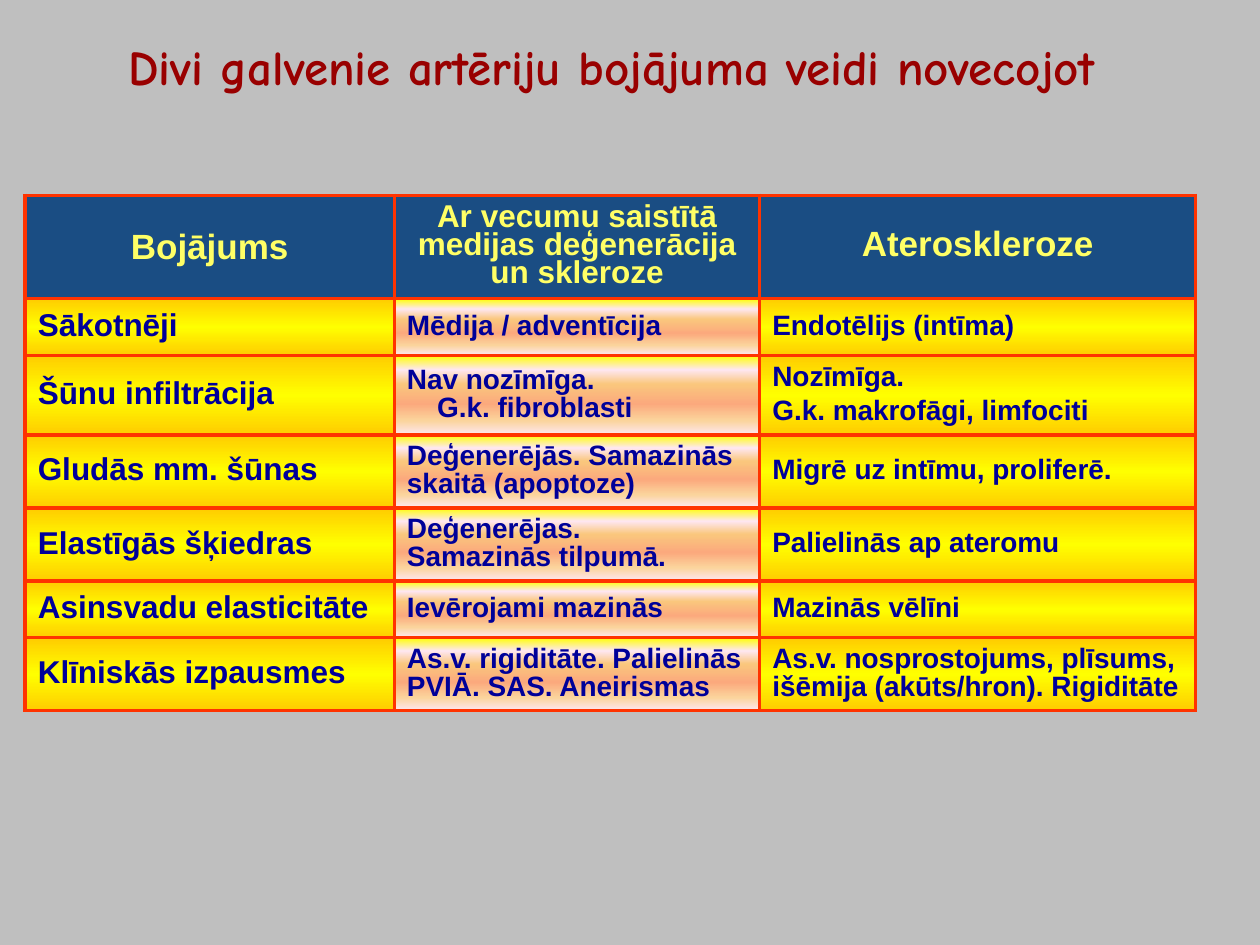
import pptx
import pptx.dml.color
import pptx.enum.text
import pptx.oxml
import pptx.oxml.ns
import pptx.util

WIDTH = pptx.util.Inches(10)
HEIGHT = pptx.util.Inches(7.5)
COLORS = {
    "background": "BFBFBF",
    "title": "990000",
    "header": "1A4D83",
    "header text": "FFFF66",
    "body text": "000099",
    "border": "FF3300",
}
YELLOW = [(0, "FFCC00"), (50, "FFFF00"), (100, "FFCC00")]
PEACH = [(0, "FFFF00"), (18, "FEE7F2"), (36, "FAC77D"),
         (61, "FBA97D"), (82, "FBD49C"), (100, "FEE7F2")]
COLUMN_GRADIENTS = [YELLOW, PEACH, YELLOW]
COLUMN_INCHES = [2.93, 2.9, 3.46]
ROW_INCHES = [0.82, 0.45, 0.63, 0.58, 0.58, 0.45, 0.58]
HEADER_SIZES = [20, 18, 20]
HEADER_SPACINGS = [1.0, 0.8, 0.8]
BODY_SIZES = [18, 16, 16]
INDENTED_CELL = (2, 1)

# A newline starts a paragraph, a vertical tab breaks a line.
ROWS = [
    ["Bojājums", "Ar vecumu saistītā medijas deģenerācija un skleroze",
     "Ateroskleroze"],
    ["Sākotnēji", "Mēdija / adventīcija", "Endotēlijs (intīma)"],
    ["Šūnu infiltrācija", "Nav nozīmīga.\nG.k. fibroblasti",
     "Nozīmīga.\nG.k. makrofāgi, limfociti"],
    ["Gludās mm. šūnas", "Deģenerējās. Samazinās skaitā (apoptoze)",
     "Migrē uz intīmu, proliferē."],
    ["Elastīgās šķiedras", "Deģenerējas.\vSamazinās tilpumā.",
     "Palielinās ap ateromu"],
    ["Asinsvadu elasticitāte", "Ievērojami mazinās", "Mazinās vēlīni"],
    ["Klīniskās izpausmes",
     "As.v. rigiditāte. Palielinās PVIĀ. SAS. Aneirismas",
     "As.v. nosprostojums, plīsums, išēmija (akūts/hron). Rigiditāte"],
]


def rgb(name):
    return pptx.dml.color.RGBColor.from_string(COLORS[name])


def style_font(para, face, size, color):
    para.font.name = face
    para.font.size = pptx.util.Pt(size)
    para.font.bold = True
    para.font.color.rgb = rgb(color)


def add_title(slide, text):
    box = slide.shapes.add_textbox(
        int(0.02 * WIDTH), int(0.028 * HEIGHT),
        int(0.931 * WIDTH), int(0.084 * HEIGHT))
    frame = box.text_frame
    frame.word_wrap = True
    frame.vertical_anchor = pptx.enum.text.MSO_ANCHOR.MIDDLE
    frame.text = text
    para = frame.paragraphs[0]
    para.alignment = pptx.enum.text.PP_ALIGN.CENTER
    style_font(para, "Comic Neue", 28, "title")


def add_borders(cell):
    namespace = pptx.oxml.ns.nsdecls("a")
    for side in ("lnL", "lnR", "lnT", "lnB"):
        cell._tc.get_or_add_tcPr().append(pptx.oxml.parse_xml(
            f'<a:{side} {namespace} w="{pptx.util.Pt(2.25)}"><a:solidFill>'
            f'<a:srgbClr val="{COLORS["border"]}"/></a:solidFill></a:{side}>'))


def fill_gradient(cell, stops):
    """Fill a cell from top to bottom; borders must already be in place."""
    marks = "".join(
        f'<a:gs pos="{share * 1000}"><a:srgbClr val="{color}"/></a:gs>'
        for share, color in stops)
    cell._tc.get_or_add_tcPr().append(pptx.oxml.parse_xml(
        f'<a:gradFill {pptx.oxml.ns.nsdecls("a")} rotWithShape="1">'
        f'<a:gsLst>{marks}</a:gsLst><a:lin ang="5400000" scaled="1"/>'
        '</a:gradFill>'))


def write_cell(cell, text, size, color, spacing):
    cell.vertical_anchor = pptx.enum.text.MSO_ANCHOR.MIDDLE
    cell.text = text
    for index, para in enumerate(cell.text_frame.paragraphs):
        para.line_spacing = spacing
        para.space_before = pptx.util.Pt(3 if index else 0)
        style_font(para, "Arial", size, color)


def add_header_cell(cell, text, column):
    write_cell(cell, text, HEADER_SIZES[column], "header text",
               HEADER_SPACINGS[column])
    cell.text_frame.paragraphs[0].alignment = pptx.enum.text.PP_ALIGN.CENTER
    add_borders(cell)
    cell.fill.solid()
    cell.fill.fore_color.rgb = rgb("header")


def add_body_cell(cell, text, column):
    write_cell(cell, text, BODY_SIZES[column], "body text", 0.9)
    add_borders(cell)
    fill_gradient(cell, COLUMN_GRADIENTS[column])


def add_damage_table(slide):
    frame = slide.shapes.add_table(
        len(ROWS), len(COLUMN_INCHES), int(0.02 * WIDTH), int(0.2067 * HEIGHT),
        pptx.util.Inches(sum(COLUMN_INCHES)), pptx.util.Inches(sum(ROW_INCHES)))
    table = frame.table
    for column, inches in zip(table.columns, COLUMN_INCHES):
        column.width = pptx.util.Inches(inches)
    for row, inches in zip(table.rows, ROW_INCHES):
        row.height = pptx.util.Inches(inches)
    for row, texts in enumerate(ROWS):
        add_cell = add_body_cell if row else add_header_cell
        for column, text in enumerate(texts):
            add_cell(table.cell(row, column), text, column)
    indented = table.cell(*INDENTED_CELL).text_frame.paragraphs[1]
    indented.space_before = pptx.util.Pt(0)
    indented._p.get_or_add_pPr().set("marL", str(pptx.util.Inches(0.24)))


def main():
    deck = pptx.Presentation()
    deck.slide_width, deck.slide_height = WIDTH, HEIGHT
    slide = deck.slides.add_slide(deck.slide_layouts[6])
    slide.background.fill.solid()
    slide.background.fill.fore_color.rgb = rgb("background")
    add_title(slide, "Divi galvenie artēriju bojājuma veidi novecojot")
    add_damage_table(slide)
    deck.save("out.pptx")


if __name__ == "__main__":
    main()
